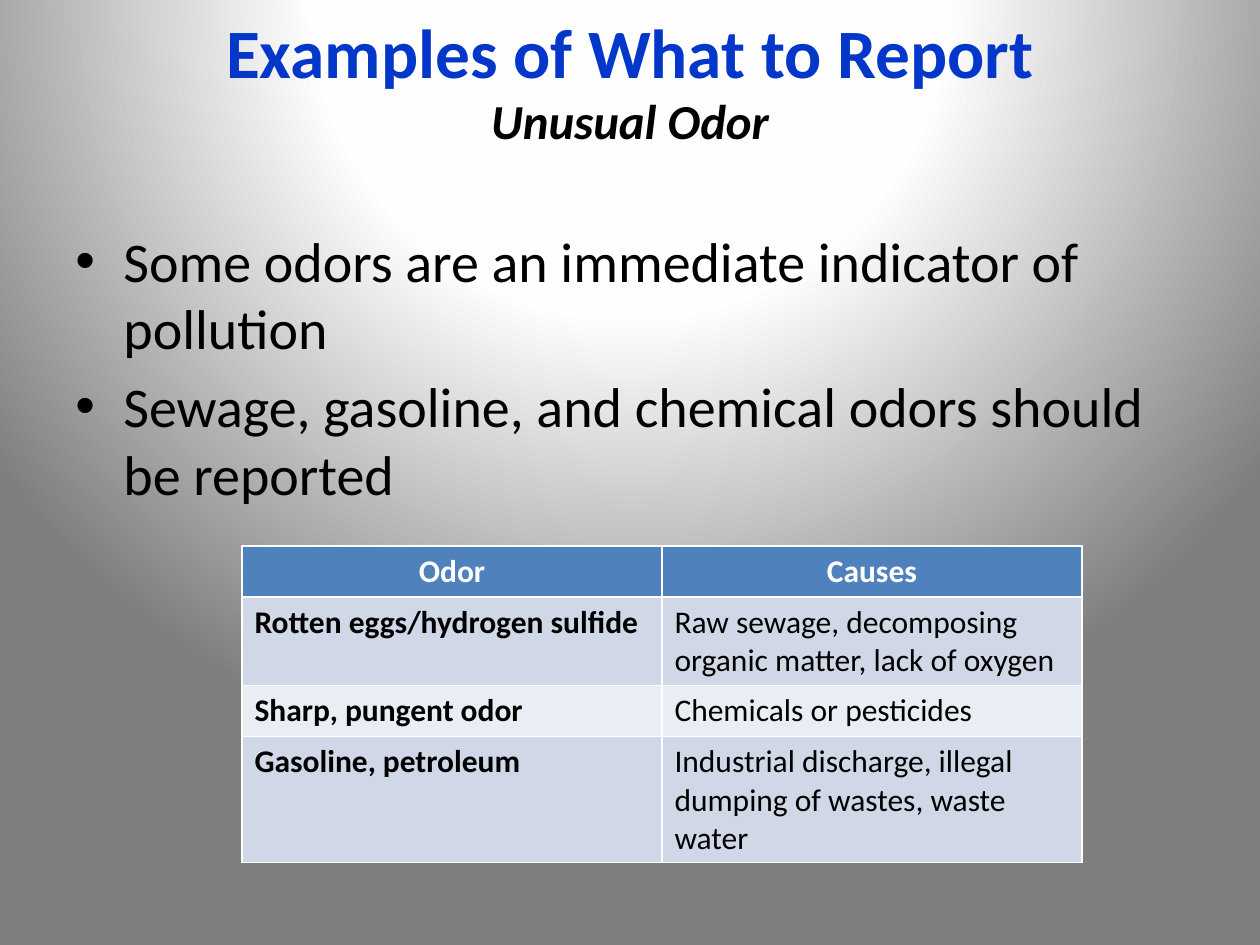
import lxml.etree
import pptx
import pptx.dml.color
import pptx.enum.text
import pptx.oxml
import pptx.oxml.ns
import pptx.util

HUES = {
    "title": "0337C9", "ink": "000000", "white": "FFFFFF", "glow": "FEFEFE",
    "edge": "7F7F7F", "head": "4F81BD", "odd": "D0D8E8", "even": "E9EDF4",
}
POINTS = [
    "Some odors are an immediate indicator of pollution",
    "Sewage, gasoline, and chemical odors should be reported",
]
ROWS = [
    ("Odor", "Causes"),
    ("Rotten eggs/hydrogen sulfide", "Raw sewage, decomposing organic matter, lack of oxygen"),
    ("Sharp, pungent odor", "Chemicals or pesticides"),
    ("Gasoline, petroleum", "Industrial discharge, illegal dumping of wastes, waste water"),
]


def px(n):
    """Turn pixels into EMU."""
    return pptx.util.Emu(round(n * 914400 / 126))


def hue(name):
    """Look up a colour by name."""
    return pptx.dml.color.RGBColor.from_string(HUES[name])


def style(run, size, tint, bold=False, slant=False):
    """Format one run."""
    font = run.font
    font.name, font.size = "Calibri", pptx.util.Pt(size)
    font.bold, font.italic = bold, slant
    font.color.rgb = hue(tint)


def paint(slide):
    """Fill the background with a round gradient."""
    fill = slide.background.fill
    fill.gradient()
    grad = slide.background._cSld.find(".//" + pptx.oxml.ns.qn("a:gradFill"))
    stops = "".join(
        f'<a:gs pos="{pos}000"><a:srgbClr val="{HUES[name]}"/></a:gs>'
        for pos, name in ((0, "white"), (40, "glow"), (100, "edge")))
    new = pptx.oxml.parse_xml(
        f'<a:gradFill {pptx.oxml.ns.nsdecls("a")} rotWithShape="1"><a:gsLst>{stops}</a:gsLst>'
        '<a:path path="circle"><a:fillToRect l="50000" t="-80000" r="50000" b="180000"/>'
        '</a:path></a:gradFill>')
    grad.getparent().replace(grad, new)


def head(slide, x, y, w, h):
    """Place the title and its subtitle line."""
    title = slide.shapes.title
    title.left, title.top, title.width, title.height = map(px, (x, y, w, h))
    frame = title.text_frame
    frame.text = "Examples of What to Report\vUnusual Odor"
    frame.vertical_anchor = pptx.enum.text.MSO_ANCHOR.MIDDLE
    frame.margin_top, frame.margin_bottom = px(8), 0
    para = frame.paragraphs[0]
    para.alignment = pptx.enum.text.PP_ALIGN.CENTER
    para.line_spacing = 0.95
    style(para.runs[0], 39.6, "title", bold=True)
    style(para.runs[1], 27.9, "ink", bold=True, slant=True)
    gap = para._p.find(pptx.oxml.ns.qn("a:br"))
    lxml.etree.SubElement(gap, pptx.oxml.ns.qn("a:rPr"), sz="3960")


def body(slide, x, y, w, h):
    """Place the bulleted points."""
    frame = slide.shapes.add_textbox(*map(px, (x, y, w, h))).text_frame
    frame.word_wrap = True
    frame.text = "\n".join(POINTS)
    for i, para in enumerate(frame.paragraphs):
        props = para._p.get_or_add_pPr()
        props.set("marL", str(px(48)))
        props.set("indent", str(-px(48)))
        lxml.etree.SubElement(props, pptx.oxml.ns.qn("a:buFont"), typeface="Arial")
        lxml.etree.SubElement(props, pptx.oxml.ns.qn("a:buChar"), char="•")
        para.space_before = pptx.util.Pt(6.4 if i else 0)
        style(para.runs[0], 32, "ink")


def grid(slide, x, y, w, h):
    """Place the table of odors and causes."""
    shape = slide.shapes.add_table(len(ROWS), 2, *map(px, (x, y, w, h)))
    for r, row in enumerate(ROWS):
        fill = "head" if r == 0 else "odd" if r % 2 else "even"
        for c, text in enumerate(row):
            cell = shape.table.cell(r, c)
            cell.fill.solid()
            cell.fill.fore_color.rgb = hue(fill)
            cell.text_frame.text = text
            para = cell.text_frame.paragraphs[0]
            if r == 0:
                para.alignment = pptx.enum.text.PP_ALIGN.CENTER
            style(para.runs[0], 18, "ink" if r else "white", bold=r == 0 or c == 0)


def main():
    """Build and save the slide."""
    deck = pptx.Presentation()
    deck.slide_width, deck.slide_height = px(1260), px(945)
    slide = deck.slides.add_slide(deck.slide_layouts[5])
    paint(slide)
    head(slide, 63, 0, 1134, 158)
    body(slide, 63, 220, 1134, 624)
    grid(slide, 242, 546, 840, 204)
    deck.save("out.pptx")


if __name__ == "__main__":
    main()
